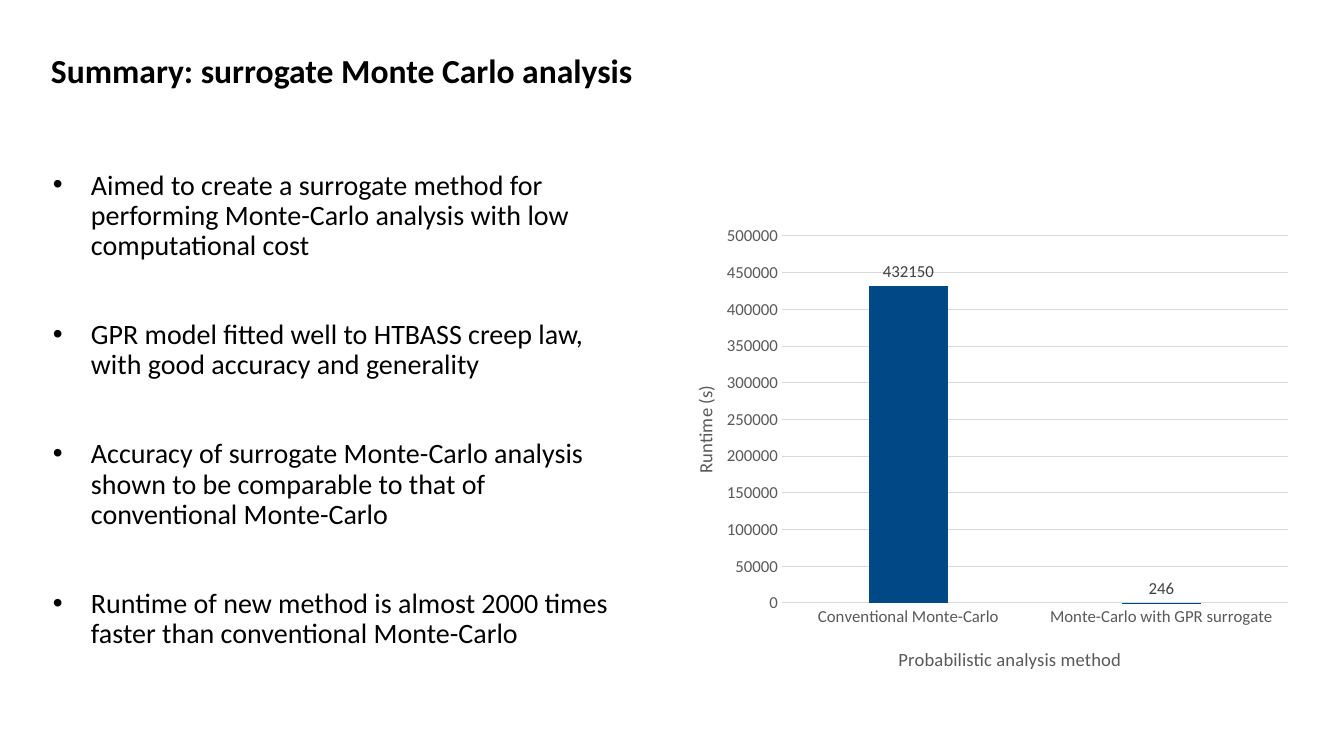
"""Build the summary slide on surrogate Monte Carlo analysis."""
from lxml import etree
from pptx import Presentation
from pptx.chart.data import CategoryChartData
from pptx.dml.color import RGBColor
from pptx.enum.chart import XL_CHART_TYPE, XL_LABEL_POSITION, XL_TICK_MARK
from pptx.oxml.ns import qn
from pptx.util import Emu, Pt

COLUMNS = XL_CHART_TYPE.COLUMN_CLUSTERED
OUTSIDE_END = XL_LABEL_POSITION.OUTSIDE_END
NO_TICKS = XL_TICK_MARK.NONE

TITLE = "Summary: surrogate Monte Carlo analysis"
BULLETS = [
    "Aimed to create a surrogate method for performing Monte-Carlo analysis with low computational cost",
    "GPR model fitted well to HTBASS creep law, with good accuracy and generality",
    "Accuracy of surrogate Monte-Carlo analysis shown to be comparable to that of conventional Monte-Carlo",
    "Runtime of new method is almost 2000 times faster than conventional Monte-Carlo",
]
RUNTIMES = {"Conventional Monte-Carlo": 432150, "Monte-Carlo with GPR surrogate": 246}
METHOD_TITLE = "Probabilistic analysis method"
RUNTIME_TITLE = "Runtime (s)"

FONT = "Calibri"
BLACK, GREY, DARK_GREY, RULE, BLUE = "000000", "595959", "404040", "D9D9D9", "004987"
SLIDE_SIZE = (1344, 756)
TITLE_BOX = (41, 49, 902, 44)
BULLET_BOX = (43, 166, 577, 481)
CHART_BOX = (662, 217, 638, 472)
PLOT_BOX = (782, 236, 506, 367)
METHOD_TITLE_AT = (895, 643)
RUNTIME_TITLE_AT = (689, 382)
BULLET_INDENT = 38
BULLET_GAP = 42


def px(length):
    return Emu(round(length * 914400 / 100.8))


def color(value):
    return RGBColor.from_string(value)


def style(font, size, value, bold=False):
    font.name, font.size, font.bold = FONT, Pt(size), bold
    font.color.rgb = color(value)


def add_text(page, box, lines, size, bold=False, bulleted=False):
    frame = page.shapes.add_textbox(*map(px, box)).text_frame
    frame.word_wrap = True
    for index, line in enumerate(lines):
        para = frame.paragraphs[0] if index == 0 else frame.add_paragraph()
        para.text = line
        para.line_spacing = 0.9
        if index:
            para.space_before = Pt(BULLET_GAP)
        if bulleted:
            properties = para._p.get_or_add_pPr()
            properties.set("marL", str(px(BULLET_INDENT)))
            properties.set("indent", str(-px(BULLET_INDENT)))
            etree.SubElement(properties, qn("a:buFont"), typeface="Arial")
            etree.SubElement(properties, qn("a:buChar"), char="•")
        style(para.font, size, BLACK, bold)


def place(element, index, left, top, width=None, height=None):
    for old in element.findall(qn("c:layout")):
        element.remove(old)
    layout = etree.Element(qn("c:layout"))
    manual = etree.SubElement(layout, qn("c:manualLayout"))
    chart_left, chart_top, chart_width, chart_height = CHART_BOX
    settings = [("xMode", "edge"), ("yMode", "edge"),
                ("x", round((left - chart_left) / chart_width, 4)),
                ("y", round((top - chart_top) / chart_height, 4))]
    if width:
        settings.insert(0, ("layoutTarget", "inner"))
        settings += [("w", round(width / chart_width, 4)), ("h", round(height / chart_height, 4))]
    for name, value in settings:
        etree.SubElement(manual, qn(f"c:{name}"), val=str(value))
    element.insert(index, layout)


def style_axis(axis, title, position, rotation):
    axis.major_tick_mark = axis.minor_tick_mark = NO_TICKS
    style(axis.tick_labels.font, 12, GREY)
    frame = axis.axis_title.text_frame
    frame.text = title
    style(frame.paragraphs[0].font, 13.3, GREY)
    element = axis.axis_title._element
    element.find(".//" + qn("a:bodyPr")).set("rot", str(rotation))
    place(element, 1, *position)


def add_rule(line):
    line.color.rgb = color(RULE)
    line.width = Pt(0.75)


def add_runtime_chart(page):
    data = CategoryChartData()
    data.categories = list(RUNTIMES)
    data.add_series("Series 1", list(RUNTIMES.values()))
    chart = page.shapes.add_chart(COLUMNS, *map(px, CHART_BOX), data).chart
    chart.has_legend = chart.has_title = False
    style(chart.font, 10, BLACK)

    methods, runtimes = chart.category_axis, chart.value_axis
    style_axis(methods, METHOD_TITLE, METHOD_TITLE_AT, 0)
    style_axis(runtimes, RUNTIME_TITLE, RUNTIME_TITLE_AT, -5400000)
    add_rule(methods.format.line)
    add_rule(runtimes.major_gridlines.format.line)
    runtimes.format.line.fill.background()
    runtimes.minimum_scale, runtimes.maximum_scale, runtimes.major_unit = 0, 500000, 50000

    plot = chart.plots[0]
    plot.gap_width, plot.overlap, plot.vary_by_categories = 219, -27, False
    series = plot.series[0]
    series.format.fill.solid()
    series.format.fill.fore_color.rgb = color(BLUE)
    labels = series.data_labels
    labels.show_value = True
    labels.position = OUTSIDE_END
    style(labels.font, 12, DARK_GREY)
    place(chart._chartSpace.chart.plotArea, 0, *PLOT_BOX)


def main():
    deck = Presentation()
    deck.slide_width, deck.slide_height = map(px, SLIDE_SIZE)
    page = deck.slides.add_slide(deck.slide_layouts[6])
    add_text(page, TITLE_BOX, [TITLE], 24, bold=True)
    add_text(page, BULLET_BOX, BULLETS, 20, bulleted=True)
    add_runtime_chart(page)
    deck.save("out.pptx")


if __name__ == "__main__":
    main()
